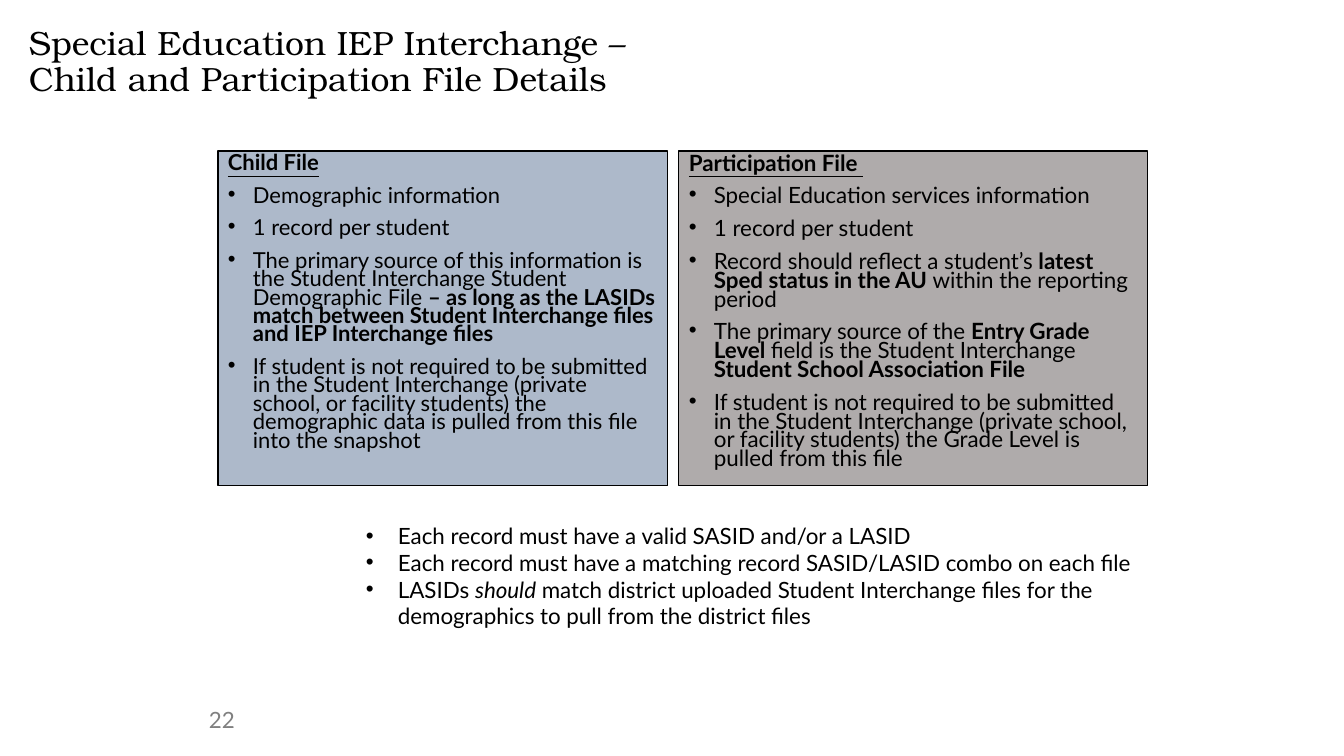
"""Build the Child and Participation file details slide."""
from dataclasses import dataclass

from lxml import etree
from pptx import Presentation
from pptx import util as u
from pptx.dml.color import RGBColor
from pptx.enum import shapes, text
from pptx.oxml import ns

EMU_PER_PX = 914400 / 100.8
BLACK = RGBColor(0x00, 0x00, 0x00)
GRAY = RGBColor(0x80, 0x80, 0x80)
CHILD_BLUE = RGBColor(0xAD, 0xB9, 0xCA)
PARTICIPATION_GRAY = RGBColor(0xAF, 0xAB, 0xAB)
BODY_FONT = "Lato"
TITLE_FONT = "TeX Gyre Bonum"


@dataclass(frozen=True)
class Span:
    """A stretch of text in one style."""
    words: str
    bold: bool = False
    italic: bool = False
    underline: bool = False


@dataclass(frozen=True)
class Box:
    """A place on the slide in px."""
    left: int
    top: int
    width: int
    height: int


@dataclass(frozen=True)
class FilePanel:
    """A filled panel describing one file."""
    box: Box
    fill: RGBColor
    size: float
    heading: str
    points: list[list[Span]]


@dataclass(frozen=True)
class Label:
    """A plain text box."""
    box: Box
    words: str
    font: str
    size: float
    color: RGBColor
    spacing: float = 1.0
    inset: bool = True


TITLE = Label(Box(29, 26, 733, 84),
              "Special Education IEP Interchange – \vChild and Participation File Details",
              TITLE_FONT, 24, BLACK, spacing=0.9, inset=False)
PAGE_NUMBER = Label(Box(199, 701, 51, 40), "22", BODY_FONT, 16, GRAY)

PANELS = [
    FilePanel(Box(218, 151, 450, 335), CHILD_BLUE, 15.7, "Child File", [
        [Span("Demographic information")],
        [Span("1 record per student")],
        [Span("The primary source of this information is the Student Interchange "
              "Student Demographic File "),
         Span("– as long as the LASIDs match between Student Interchange files "
              "and IEP Interchange files", bold=True)],
        [Span("If student is not required to be submitted in the Student Interchange "
              "(private school, or facility students) the demographic data is pulled "
              "from this file into the snapshot")],
    ]),
    FilePanel(Box(679, 151, 469, 335), PARTICIPATION_GRAY, 16, "Participation File ", [
        [Span("Special Education services information")],
        [Span("1 record per student")],
        [Span("Record should reflect a student’s"),
         Span(" latest Sped status in the AU ", bold=True),
         Span("within the reporting period")],
        [Span("The primary source of the "),
         Span("Entry Grade Level ", bold=True),
         Span("field is the Student Interchange "),
         Span("Student School Association File", bold=True)],
        [Span("If student is not required to be submitted in the Student Interchange "
              "(private school, or facility students) the Grade Level is pulled "
              "from this file")],
    ]),
]

RULES_BOX = Box(356, 517, 807, 119)
RULES = [
    [Span("Each record must have a valid SASID and/or a LASID")],
    [Span("Each record must have a matching record SASID/LASID combo on each file")],
    [Span("LASIDs "), Span("should", italic=True),
     Span(" match district uploaded Student Interchange files for the demographics "
          "to pull from the district files")],
]


def px(length: int) -> u.Emu:
    """Turn px into EMU."""
    return u.Emu(round(length * EMU_PER_PX))


def place(box: Box) -> tuple[u.Emu, u.Emu, u.Emu, u.Emu]:
    """Return the box as EMU arguments."""
    return px(box.left), px(box.top), px(box.width), px(box.height)


def style(font, name: str, size: float, color: RGBColor) -> None:
    """Set family, size and colour of a font."""
    font.name = name
    font.size = u.Pt(size)
    font.color.rgb = color


def add_bullet(paragraph, indent: int) -> None:
    """Give a paragraph a round bullet with a hanging indent."""
    properties = paragraph._p.get_or_add_pPr()
    properties.set("marL", str(px(indent)))
    properties.set("indent", str(-px(indent)))
    etree.SubElement(properties, ns.qn("a:buFont")).set("typeface", "Arial")
    etree.SubElement(properties, ns.qn("a:buChar")).set("char", "•")


def write_spans(paragraph, spans: list[Span], size: float) -> None:
    """Fill a left-aligned paragraph with styled spans."""
    paragraph.alignment = text.PP_ALIGN.LEFT
    for span in spans:
        run = paragraph.add_run()
        run.text = span.words
        style(run.font, BODY_FONT, size, BLACK)
        run.font.bold = span.bold
        run.font.italic = span.italic
        run.font.underline = span.underline


def draw_label(slide, label: Label) -> None:
    """Draw a plain text box."""
    frame = slide.shapes.add_textbox(*place(label.box)).text_frame
    frame.word_wrap = True
    if not label.inset:
        frame.margin_left = frame.margin_right = 0
        frame.margin_top = frame.margin_bottom = 0
    frame.text = label.words
    paragraph = frame.paragraphs[0]
    paragraph.line_spacing = label.spacing
    for run in paragraph.runs:
        style(run.font, label.font, label.size, label.color)


def draw_panel(slide, panel: FilePanel) -> None:
    """Draw a file panel with its heading and bullets."""
    rectangle = slide.shapes.add_shape(shapes.MSO_SHAPE.RECTANGLE, *place(panel.box))
    rectangle.shadow.inherit = False
    rectangle.fill.solid()
    rectangle.fill.fore_color.rgb = panel.fill
    rectangle.line.color.rgb = BLACK
    rectangle.line.width = u.Pt(0.75)
    frame = rectangle.text_frame
    frame.word_wrap = True
    frame.vertical_anchor = text.MSO_ANCHOR.TOP
    heading = frame.paragraphs[0]
    heading.line_spacing = 0.7
    write_spans(heading, [Span(panel.heading, bold=True, underline=True)], panel.size)
    for spans in panel.points:
        point = frame.add_paragraph()
        add_bullet(point, 25)
        point.line_spacing = 0.7
        point.space_before = u.Pt(10)
        write_spans(point, spans, panel.size)


def draw_rules(slide) -> None:
    """Draw the bulleted matching rules below the panels."""
    frame = slide.shapes.add_textbox(*place(RULES_BOX)).text_frame
    frame.word_wrap = True
    for index, spans in enumerate(RULES):
        rule = frame.add_paragraph() if index else frame.paragraphs[0]
        add_bullet(rule, 32)
        write_spans(rule, spans, 16)


def main() -> None:
    """Build and save the slide."""
    deck = Presentation()
    deck.slide_width, deck.slide_height = px(1344), px(756)
    slide = deck.slides.add_slide(deck.slide_layouts[6])
    draw_label(slide, TITLE)
    for panel in PANELS:
        draw_panel(slide, panel)
    draw_rules(slide)
    draw_label(slide, PAGE_NUMBER)
    deck.save("out.pptx")


if __name__ == "__main__":
    main()
